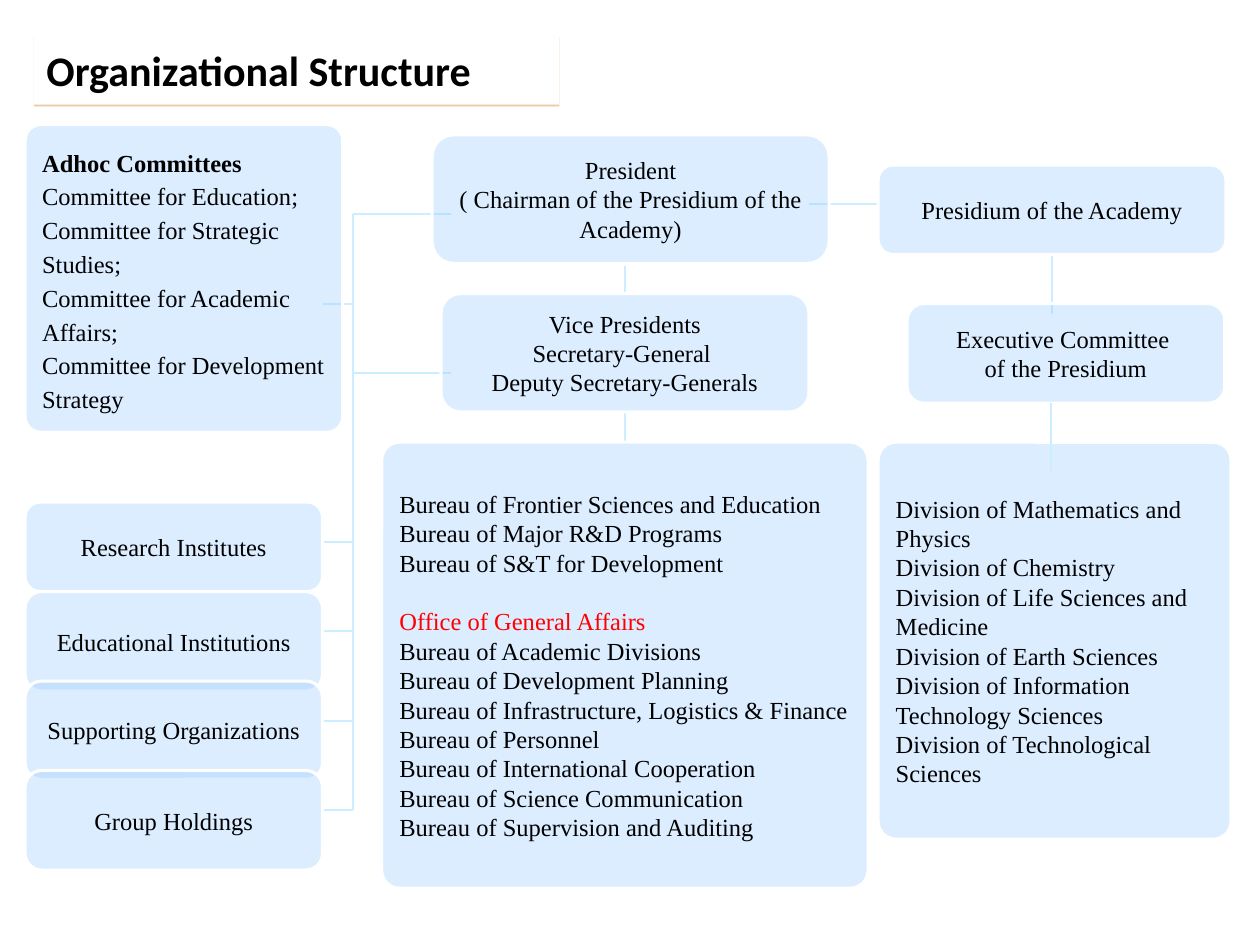
from lxml import etree
from pptx import Presentation
from pptx.dml.color import RGBColor
from pptx.enum.shapes import MSO_CONNECTOR as CONN, MSO_SHAPE as SHAPE
from pptx.enum.text import MSO_ANCHOR as ANCHOR, PP_ALIGN as ALIGN
from pptx.oxml.ns import qn
from pptx.util import Inches, Pt

COLUMNS, ROWS = 100, 75
CELL = Inches(10) / COLUMNS
TOP, BOTTOM = 0, 2
TRUNK, STUB = 28, 25.6

BUREAUS = [
    "Bureau of Frontier Sciences and Education",
    "Bureau of Major R&D Programs",
    "Bureau of S&T for Development",
    ("Office of General Affairs", {"color": "FF0000", "before": 16.8}),
    "Bureau of Academic Divisions",
    "Bureau of Development Planning",
    "Bureau of Infrastructure, Logistics & Finance",
    "Bureau of Personnel",
    "Bureau of International Cooperation",
    "Bureau of Science Communication",
    "Bureau of Supervision and Auditing",
]
DIVISIONS = [
    "Division of Mathematics and Physics",
    "Division of Chemistry",
    "Division of Life Sciences and Medicine",
    "Division of Earth Sciences",
    "Division of Information Technology Sciences",
    "Division of Technological Sciences",
]
COMMITTEES = [
    ("Adhoc Committees", {"bold": True}),
    "Committee for Education; Committee for Strategic Studies;",
    "Committee for Academic Affairs;",
    "Committee for Development Strategy",
]
UNITS = [
    ("Research Institutes", 7.1),
    ("Educational Institutions", 7.9),
    ("Supporting Organizations", 7.8),
    ("Group Holdings", 7.9),
]


def cells(*counts):
    """Turn grid counts into slide lengths."""
    return [round(n * CELL) for n in counts]


def rgb(value):
    """Turn a hex string into a colour."""
    return RGBColor.from_string(value)


def add_text(p, text, size=14, font="Times New Roman", color="000000",
             bold=False, align=ALIGN.LEFT, spacing=None, before=0):
    """Write one formatted run into a paragraph."""
    p.alignment = align
    p.space_before = Pt(before)
    if spacing:
        p.line_spacing = spacing
    r = p.add_run()
    r.text = text
    r.font.size, r.font.name, r.font.bold = Pt(size), font, bold
    r.font.color.rgb = rgb(color)


def add_panel(s, kind, at, lines, **style):
    """Add a shape holding one paragraph per line."""
    sp = s.shapes.add_shape(kind, *cells(*at))
    sp.shadow.inherit = False
    sp.fill.solid()
    tf = sp.text_frame
    tf.word_wrap = True
    tf.vertical_anchor = ANCHOR.MIDDLE
    for i, line in enumerate(lines):
        text, extra = (line, {}) if isinstance(line, str) else line
        p = tf.add_paragraph() if i else tf.paragraphs[0]
        add_text(p, text, **{**style, **extra})
    return sp


def add_box(s, at, lines, corner=None, align=ALIGN.CENTER, **style):
    """Add a translucent rounded box with a white outline."""
    sp = add_panel(s, SHAPE.ROUNDED_RECTANGLE, at, lines, align=align, **style)
    if corner:
        sp.adjustments[0] = corner
    sp.fill.fore_color.rgb = rgb("99CCFF")
    color = sp.fill._xPr.find(".//" + qn("a:srgbClr"))
    etree.SubElement(color, qn("a:alpha"), val="34000")
    sp.line.color.rgb = rgb("FFFFFF")
    sp.line.width = Pt(1.75)
    return sp


def add_title(s, at, text):
    """Add the title bar with its thin coloured shadow."""
    sp = add_panel(s, SHAPE.RECTANGLE, at, [text], size=24, font="Calibri", bold=True)
    sp.fill.fore_color.rgb = rgb("FFFFFF")
    sp.line.fill.background()
    hang = Inches(0.39)
    pPr = sp.text_frame.paragraphs[0]._p.get_or_add_pPr()
    pPr.set("marL", str(hang))
    pPr.set("indent", str(-hang))
    effects = sp._element.spPr.find(qn("a:effectLst"))
    shadow = etree.SubElement(effects, qn("a:outerShdw"), blurRad="0",
                              dist=str(Pt(1)), dir="5400000", rotWithShape="0")
    color = etree.SubElement(shadow, qn("a:srgbClr"), val="D89243")
    etree.SubElement(color, qn("a:alpha"), val="50000")


def add_line(s, x1, y1, x2, y2):
    """Add a pale straight connector."""
    c = s.shapes.add_connector(CONN.STRAIGHT, *cells(x1, y1, x2, y2))
    c.line.color.rgb = rgb("CCECFF")
    c.line.width = Pt(1.25)
    etree.SubElement(c._element.spPr, qn("a:effectLst"))
    return c


def add_branches(s):
    """Add the vertical trunk and its side branches."""
    for row in (24.1, *(43 + 7.1 * i for i in range(len(UNITS)))):
        add_line(s, STUB, row, TRUNK, row)
    for row in (17, 29.6):
        add_line(s, 35.8, row, TRUNK, row)
    add_line(s, TRUNK, 17, TRUNK, 64.3)
    add_line(s, 64.2, 16.2, 69.7, 16.2)


def main():
    """Build the organization chart slide."""
    prs = Presentation()
    prs.slide_width, prs.slide_height = cells(COLUMNS, ROWS)
    s = prs.slides.add_slide(prs.slide_layouts[6])

    add_branches(s)
    to_vice = add_line(s, 49.6, 21.1, 49.6, 23.3)
    to_bureaus = add_line(s, 49.6, 32.7, 49.6, 35.1)
    to_executive = add_line(s, 83.5, 20.2, 83.5, 24.9)

    bureaus = add_box(s, (30.3, 35.1, 38.6, 35.4), BUREAUS, 0.04, ALIGN.LEFT)
    vice = add_box(s, (35, 23.3, 29.2, 9.4),
                   ["Vice Presidents", "Secretary-General ", "Deputy Secretary-Generals"])
    for i, (name, height) in enumerate(UNITS):
        add_box(s, (2, 39.85 + 7.1 * i, 23.6, height), [name])
    presidium = add_box(s, (69.7, 13.1, 27.6, 7.1), ["Presidium of the Academy"])
    add_box(s, (69.7, 35.1, 28, 31.5), DIVISIONS, 0.05, ALIGN.LEFT)
    add_box(s, (34.3, 10.7, 31.5, 10.2),
            ["President", "( Chairman of the Presidium of the Academy)"])
    add_box(s, (72, 24.1, 25.2, 7.9), ["Executive Committee ", "of the Presidium"])
    add_title(s, (2.7, 2.8, 41.7, 5.5), "Organizational Structure")
    add_box(s, (2, 9.9, 25.2, 24.4), COMMITTEES, 0.05, ALIGN.LEFT, spacing=1.15)
    add_line(s, 83.4, 32, 83.4, 37.5)

    to_vice.end_connect(vice, TOP)
    to_bureaus.begin_connect(vice, BOTTOM)
    to_bureaus.end_connect(bureaus, TOP)
    to_executive.begin_connect(presidium, BOTTOM)
    prs.save("out.pptx")


if __name__ == "__main__":
    main()
